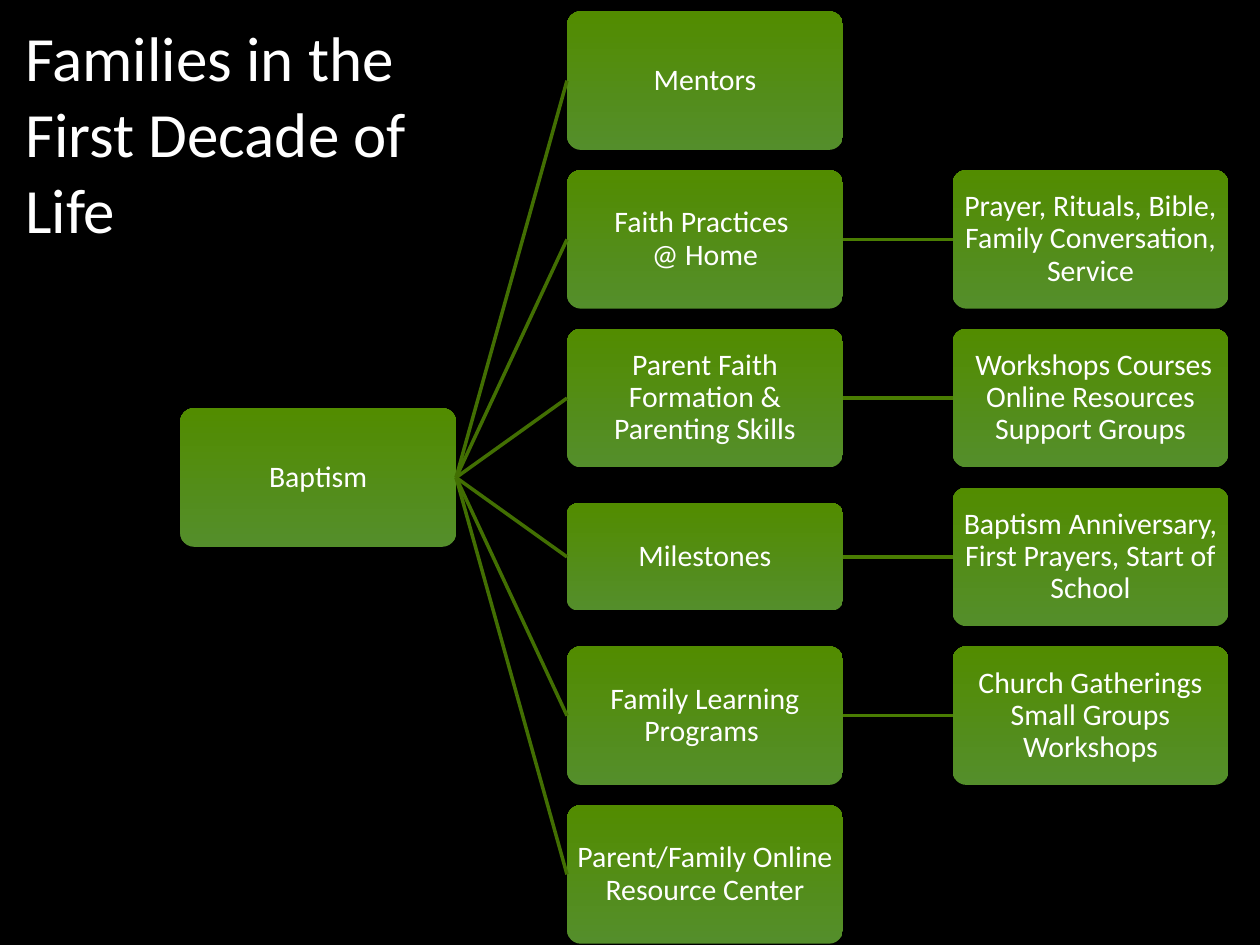
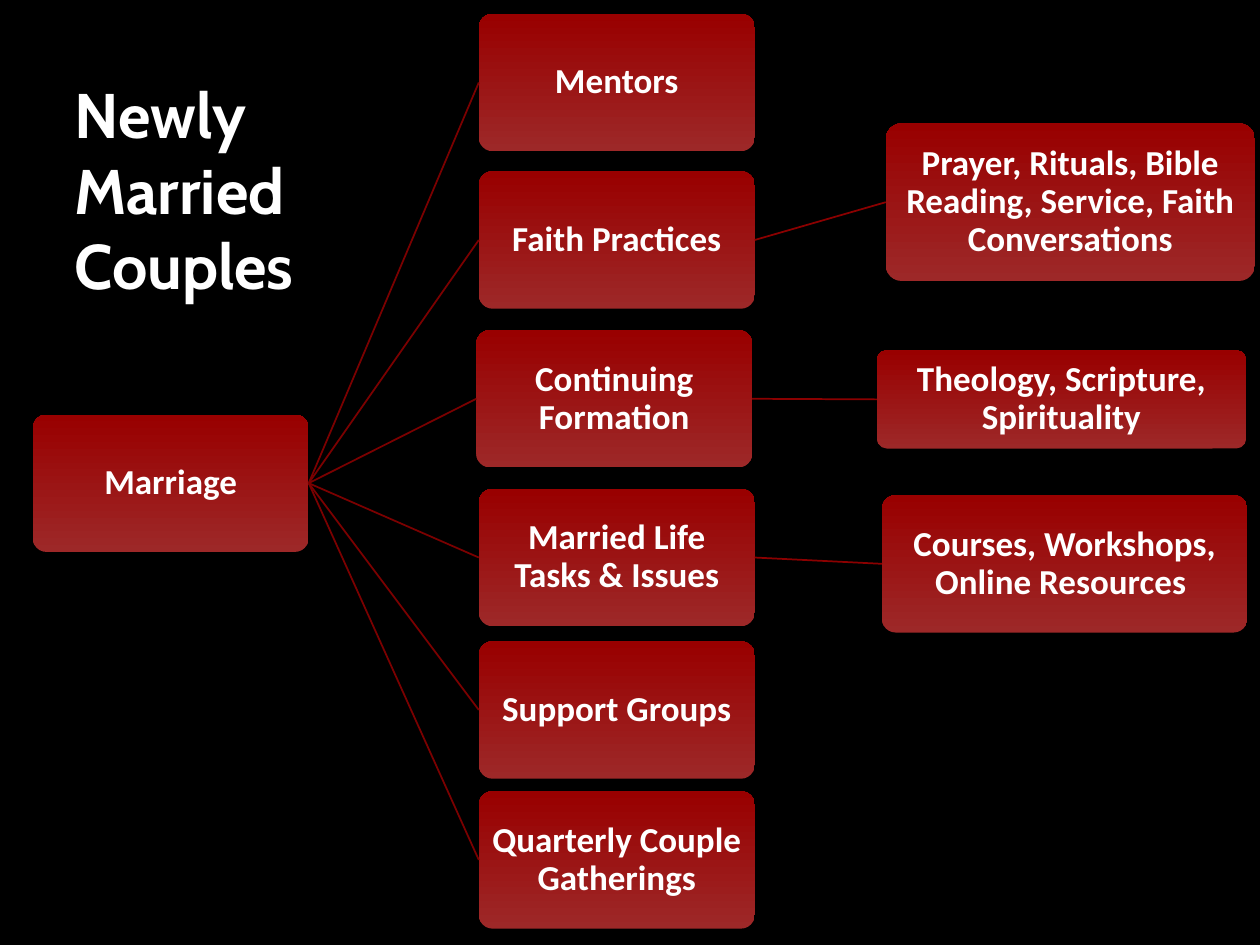
from lxml import etree
from pptx import Presentation
from pptx.dml.color import RGBColor
from pptx.enum.shapes import MSO_CONNECTOR, MSO_SHAPE
from pptx.enum.text import MSO_ANCHOR, MSO_AUTO_SIZE, PP_ALIGN
from pptx.oxml.ns import qn
from pptx.util import Inches, Pt

ROUNDED = MSO_SHAPE.ROUNDED_RECTANGLE
STRAIGHT = MSO_CONNECTOR.STRAIGHT
TOP, MIDDLE = MSO_ANCHOR.TOP, MSO_ANCHOR.MIDDLE
LEFT, CENTER = PP_ALIGN.LEFT, PP_ALIGN.CENTER
NO_FIT = MSO_AUTO_SIZE.NONE

BLACK = RGBColor(0x00, 0x00, 0x00)
WHITE = RGBColor(0xFF, 0xFF, 0xFF)
GREEN = RGBColor(0x52, 0x8C, 0x00)
SOFT_GREEN = RGBColor(0x54, 0x8E, 0x2B)
DARK_GREEN = RGBColor(0x42, 0x6F, 0x02)
MID_GREEN = RGBColor(0x4A, 0x7D, 0x02)
RED = RGBColor(0x99, 0x00, 0x00)
SOFT_RED = RGBColor(0x9D, 0x28, 0x28)
DARK_RED = RGBColor(0x7B, 0x00, 0x00)
MID_RED = RGBColor(0x8B, 0x00, 0x00)

BODY_FONT = "Calibri"
TITLE_SIZE = 36
TITLE_ONLY = 5
LEFT_SITE, RIGHT_SITE = 1, 3
BOX_WIDTH = 2.19


class TreeSlide:
    """One tree diagram slide: its style and its elements."""

    def __init__(self, deck, top_color, bottom_color, trunk_color, twig_color,
                 size, bold, line_width):
        self.page = deck.slides.add_slide(deck.slide_layouts[TITLE_ONLY])
        self.top_color, self.bottom_color = top_color, bottom_color
        self.trunk_color, self.twig_color = trunk_color, twig_color
        self.size, self.bold, self.line_width = size, bold, line_width

    def add_text(self, frame, text, font, size, align):
        para = frame.paragraphs[0]
        para.alignment = align
        for index, line in enumerate(text.split("\n")):
            if index:
                para.add_line_break()
            span = para.add_run()
            span.text = line
            span.font.name = font
            span.font.size = Pt(size)
            span.font.bold = self.bold
            span.font.color.rgb = WHITE
        return para

    def title(self, text, left, top, width, height, font=BODY_FONT):
        box = self.page.shapes.title
        box.left, box.top = Inches(left), Inches(top)
        box.width, box.height = Inches(width), Inches(height)
        frame = box.text_frame
        frame.word_wrap = True
        frame.auto_size = NO_FIT
        frame.vertical_anchor = TOP
        self.add_text(frame, text, font, TITLE_SIZE, LEFT)

    def box(self, text, left, top, width, height):
        box = self.page.shapes.add_shape(
            ROUNDED, Inches(left), Inches(top), Inches(width), Inches(height))
        box.adjustments[0] = 0.1
        box.shadow.inherit = False
        box.line.fill.background()
        box.fill.gradient()
        box.fill.gradient_angle = 90
        for stop, color in zip(box.fill.gradient_stops,
                               (self.bottom_color, self.top_color)):
            stop.color.rgb = color
        frame = box.text_frame
        frame.word_wrap = True
        frame.vertical_anchor = MIDDLE
        frame.margin_left = frame.margin_right = Inches(0.04)
        frame.margin_top = frame.margin_bottom = Inches(0.04)
        para = self.add_text(frame, text, BODY_FONT, self.size, CENTER)
        para.line_spacing = 0.9
        return box

    def link(self, start, end, color):
        line = self.page.shapes.add_connector(STRAIGHT, 0, 0, 0, 0)
        line.begin_connect(start, RIGHT_SITE)
        line.end_connect(end, LEFT_SITE)
        line.line.color.rgb = color
        line.line.width = Pt(self.line_width)
        etree.SubElement(line._element.spPr, qn("a:effectLst"))

    def tree(self, root, branches):
        """Draw the root, then each branch with its detail box, if any."""
        root_box = self.box(*root)
        for branch, detail in branches:
            branch_box = self.box(*branch)
            self.link(root_box, branch_box, self.trunk_color)
            if detail:
                self.link(branch_box, self.box(*detail), self.twig_color)


def families_slide(deck):
    slide = TreeSlide(deck, GREEN, SOFT_GREEN, DARK_GREEN, MID_GREEN,
                      size=17, bold=False, line_width=2)
    slide.title("Families in the First Decade of Life", 0.1, 0.1, 3.26, 2.52)

    # Evenly spaced rows: branch, branch height, detail
    box_height, first_top, row_step = 1.1, 0.09, 1.26
    rows = [
        ("Mentors", box_height, None),
        ("Faith Practices \n@ Home", box_height,
         "Prayer, Rituals, Bible, Family Conversation, Service"),
        ("Parent Faith Formation & Parenting Skills", box_height,
         " Workshops Courses\nOnline Resources\nSupport Groups"),
        ("Milestones", 0.85,
         "Baptism Anniversary, First Prayers, Start of School"),
        ("Family Learning Programs ", box_height,
         "Church Gatherings\nSmall Groups\nWorkshops"),
        ("Parent/Family Online Resource Center", box_height, None),
    ]
    branches = []
    for index, (label, height, detail) in enumerate(rows):
        top = first_top + index * row_step
        centered_top = top + (box_height - height) / 2
        branches.append((
            (label, 4.5, centered_top, BOX_WIDTH, height),
            detail and (detail, 7.56, top, BOX_WIDTH, box_height)))
    slide.tree(("Baptism", 1.43, 3.24, BOX_WIDTH, box_height), branches)


def couples_slide(deck):
    slide = TreeSlide(deck, RED, SOFT_RED, DARK_RED, MID_RED,
                      size=20, bold=True, line_width=1)
    slide.title("Newly Married Couples", 0.49, 0.55, 2.84, 1.92, font="Cabin")

    # Hand-placed rows: branch, left, top, detail with its own place
    box_height = 1.09
    rows = [
        ("Mentors", 3.8, 0.11, None),
        ("Faith Practices", 3.8, 1.36,
         ("Prayer, Rituals, Bible Reading, Service, Faith Conversations",
          7.03, 0.98, 2.93, 1.25)),
        ("Continuing Formation", 3.78, 2.62,
         ("Theology, Scripture, Spirituality", 6.96, 2.78, 2.93, 0.78)),
        ("Married Life Tasks & Issues", 3.8, 3.88,
         ("Courses, Workshops, Online Resources ",
          7, 3.93, 2.9, box_height)),
        ("Support Groups", 3.8, 5.09, None),
        ("Quarterly Couple Gatherings", 3.8, 6.28, None),
    ]
    branches = [((label, left, top, BOX_WIDTH, box_height), detail)
                for label, left, top, detail in rows]
    slide.tree(("Marriage", 0.26, 3.29, BOX_WIDTH, box_height), branches)


def main():
    deck = Presentation()
    deck.slide_width, deck.slide_height = Inches(10), Inches(7.5)

    # Shared black background
    background = deck.slide_master.background.fill
    background.solid()
    background.fore_color.rgb = BLACK

    families_slide(deck)
    couples_slide(deck)
    deck.save("out.pptx")


if __name__ == "__main__":
    main()
